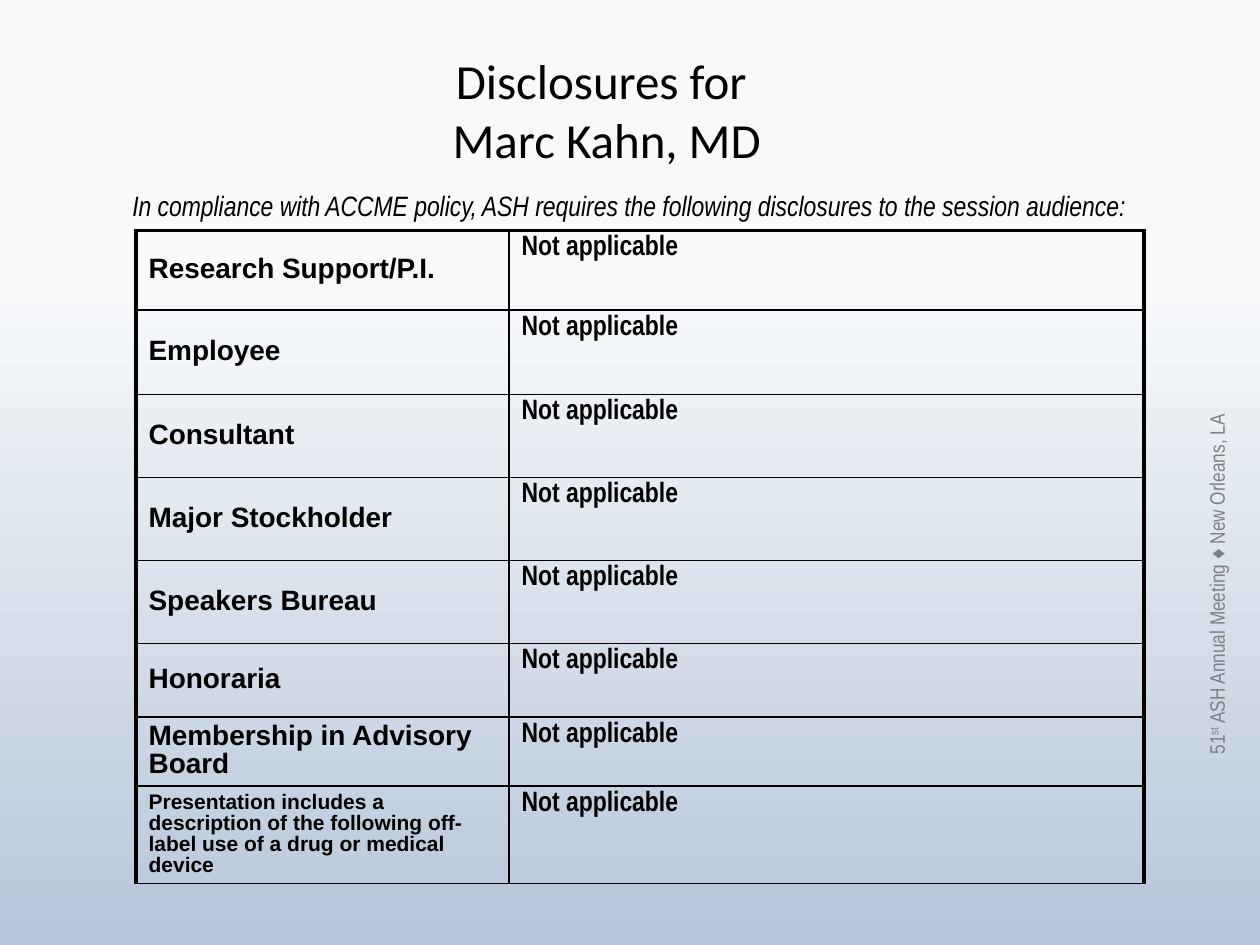
import dataclasses

import lxml.etree
import pptx
import pptx.dml.color
import pptx.enum.text
import pptx.oxml.ns
import pptx.util

Inches = pptx.util.Inches
Pt = pptx.util.Pt
RGB = pptx.dml.color.RGBColor.from_string
ANCHOR = pptx.enum.text.MSO_ANCHOR
ALIGN = pptx.enum.text.PP_ALIGN


@dataclasses.dataclass(frozen=True)
class Theme:
    """Colours, fonts, type sizes and line widths."""
    ink: str = "000000"
    muted: str = "808080"
    sky_top: str = "F7F9FB"
    sky_bottom: str = "B7C6D9"
    heading: str = "Calibri"
    label: str = "Arial"
    body: str = "Arial Narrow"
    title_size: float = 28
    text_size: float = 16
    small_size: float = 12
    thick: float = 2.25
    thin: float = 1


class Deck:
    """Draws elements on the current slide in one theme."""

    def __init__(self, prs, theme):
        self.prs, self.theme = prs, theme
        self.s = None

    def add_slide(self):
        """Start a title-only slide with a vertical gradient."""
        self.s = self.prs.slides.add_slide(self.prs.slide_layouts[5])
        fill = self.s.background.fill
        fill.gradient()
        fill.gradient_angle = 270
        ends = ((0.3, self.theme.sky_top), (1, self.theme.sky_bottom))
        for stop, (position, color) in zip(fill.gradient_stops, ends):
            stop.position = position
            stop.color.rgb = RGB(color)

    def style(self, p, face, size, color=None, bold=False, italic=False):
        """Set the font of a paragraph."""
        font = p.font
        font.name, font.size = face, Pt(size)
        font.bold, font.italic = bold, italic
        font.color.rgb = RGB(color or self.theme.ink)

    def title(self, text, left, top, width, height):
        """Place and fill the title placeholder."""
        sp = self.s.shapes.title
        sp.left, sp.top = Inches(left), Inches(top)
        sp.width, sp.height = Inches(width), Inches(height)
        tf = sp.text_frame
        tf.text = text
        tf.vertical_anchor = ANCHOR.MIDDLE
        p = tf.paragraphs[0]
        p.alignment = ALIGN.CENTER
        self.style(p, self.theme.heading, self.theme.title_size)

    def text(self, runs, left, top, width, height, size, color=None,
             italic=False, margin=None, rotation=0):
        """Add a text box of (text, superscript) runs."""
        sp = self.s.shapes.add_textbox(
            Inches(left), Inches(top), Inches(width), Inches(height))
        sp.rotation = rotation
        tf = sp.text_frame
        tf.word_wrap = True
        if margin is not None:
            tf.margin_left = tf.margin_right = Inches(margin)
            tf.margin_top = tf.margin_bottom = Inches(margin)
        p = tf.paragraphs[0]
        self.style(p, self.theme.body, size, color, italic=italic)
        for text, superscript in runs:
            r = p.add_run()
            r.text = text
            if superscript:
                r._r.get_or_add_rPr().set("baseline", "30000")

    def borders(self, cell, widths):
        """Draw the left, right, top and bottom borders of a cell."""
        tc_pr = cell._tc.get_or_add_tcPr()
        qn = pptx.oxml.ns.qn
        for i, (side, width) in enumerate(zip("LRTB", widths)):
            ln = lxml.etree.Element(qn(f"a:ln{side}"), w=str(Pt(width)))
            fill = lxml.etree.SubElement(ln, qn("a:solidFill"))
            lxml.etree.SubElement(fill, qn("a:srgbClr"), val=self.theme.ink)
            tc_pr.insert(i, ln)

    def table(self, rows, left, top, col_widths):
        """Add a two-column table of (label, value, height, label size) rows."""
        t = self.theme
        table = self.s.shapes.add_table(
            len(rows), len(col_widths), Inches(left), Inches(top),
            Inches(sum(col_widths)), Inches(sum(row[2] for row in rows))).table
        table.first_row = table.horz_banding = False
        for column, width in zip(table.columns, col_widths):
            column.width = Inches(width)
        for i, (label, value, height, size) in enumerate(rows):
            table.rows[i].height = Inches(height)
            cells = ((label, t.label, size, ANCHOR.MIDDLE, (t.thick, t.thin)),
                     (value, t.body, t.text_size, ANCHOR.TOP, (t.thin, t.thick)))
            for j, (text, face, points, anchor, sides) in enumerate(cells):
                cell = table.cell(i, j)
                cell.text = text
                cell.vertical_anchor = anchor
                cell.fill.background()
                p = cell.text_frame.paragraphs[0]
                p.line_spacing = 0.9
                self.style(p, face, points, bold=True)
                self.borders(cell, (*sides, t.thin if i else t.thick, t.thin))


def main():
    """Build the disclosure slide."""
    prs = pptx.Presentation()
    prs.slide_width, prs.slide_height = Inches(10), Inches(7.5)
    theme = Theme()
    deck = Deck(prs, theme)
    deck.add_slide()
    deck.title("Disclosures for \vMarc Kahn, MD", 2.17, 0.33, 5.29, 1.08)
    topics = (
        ("Research Support/P.I.", 0.63, theme.text_size),
        ("Employee", 0.67, theme.text_size),
        ("Consultant", 0.66, theme.text_size),
        ("Major Stockholder", 0.66, theme.text_size),
        ("Speakers Bureau", 0.66, theme.text_size),
        ("Honoraria", 0.58, theme.text_size),
        ("Membership in Advisory Board", 0.55, theme.text_size),
        ("Presentation includes a description of the following off-label use "
         "of a drug or medical device", 0.69, theme.small_size),
    )
    rows = [(label, "Not applicable", height, size)
            for label, height, size in topics]
    deck.table(rows, 1.08, 1.83, (2.96, 5.04))
    deck.text([("In compliance with ACCME policy, ASH requires the following "
                "disclosures to the session audience:", False)],
              1.05, 1.5, 8.45, 0.27, theme.text_size, italic=True, margin=0)
    deck.text([("51", False), ("st", True),
               (" ASH Annual Meeting ♦ New Orleans, LA", False)],
              7.53, 3.81, 4.25, 0.3, theme.small_size, theme.muted,
              rotation=270)
    prs.save("out.pptx")


if __name__ == "__main__":
    main()
